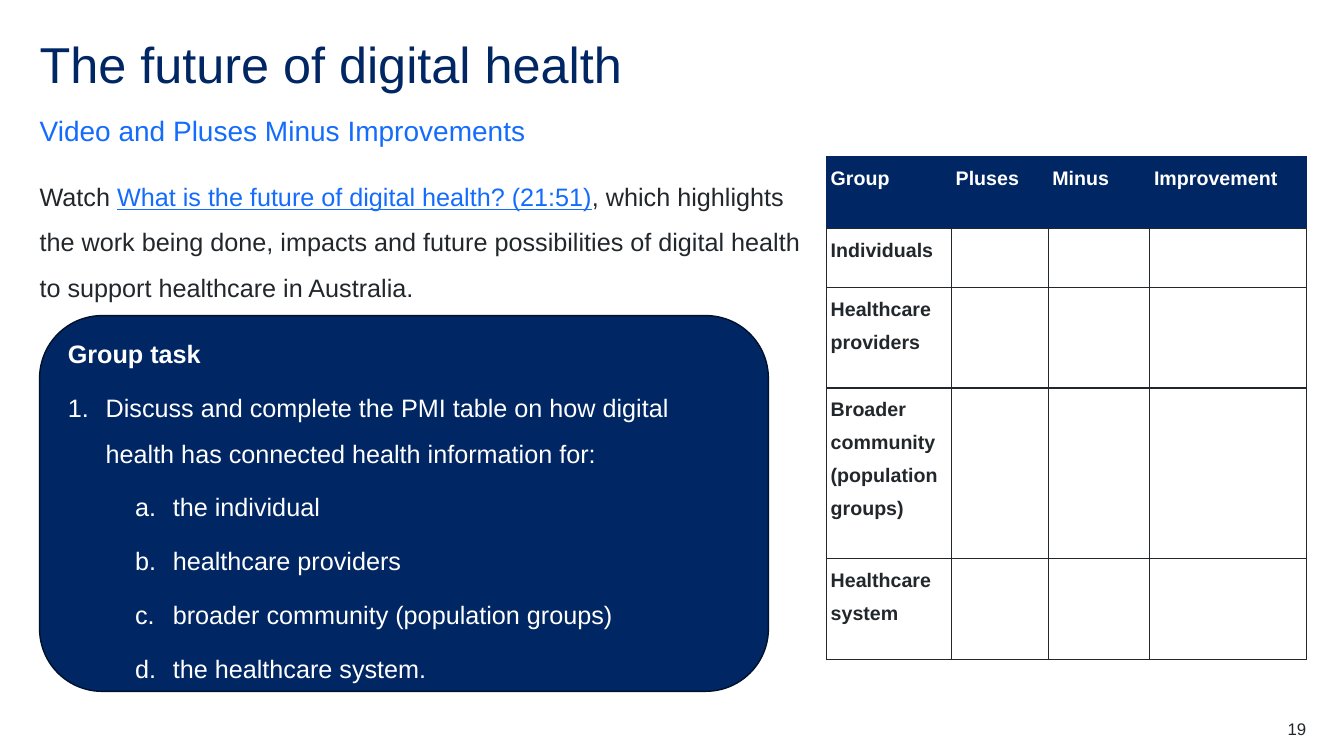
"""Build the slide on the future of digital health: video, group task and PMI table."""
from lxml import etree
from pptx import Presentation
from pptx.dml.color import RGBColor
from pptx.enum.shapes import MSO_SHAPE
from pptx.enum.text import MSO_ANCHOR, PP_ALIGN
from pptx.oxml.ns import qn
from pptx.util import Pt

NAVY = RGBColor(0x00, 0x26, 0x64)
BLUE = RGBColor(0x14, 0x6C, 0xFD)
INK = RGBColor(0x22, 0x27, 0x2B)
OUTLINE = RGBColor(0x00, 0x11, 0x2C)
WHITE = RGBColor(0xFF, 0xFF, 0xFF)
ROUNDED = MSO_SHAPE.ROUNDED_RECTANGLE
TOP, MIDDLE, BOTTOM = MSO_ANCHOR.TOP, MSO_ANCHOR.MIDDLE, MSO_ANCHOR.BOTTOM
LEFT, RIGHT = PP_ALIGN.LEFT, PP_ALIGN.RIGHT
BODY = {"line_spacing": 1.5, "space_after": Pt(6)}
CELL = {**BODY, "space_before": Pt(12)}


def write(p, text, size, color, para, **font):
    """Add a run to a paragraph and format both."""
    for name, value in {"alignment": LEFT, **para}.items():
        setattr(p, name, value)
    r = p.add_run()
    r.text = text
    r.font.color.rgb = color
    for name, value in {"name": "Arial", "size": Pt(size), **font}.items():
        setattr(r.font, name, value)


def text_frame(left, top, width, height, anchor=TOP):
    """Add a wrapping text box without margins."""
    tf = s.shapes.add_textbox(Pt(left), Pt(top), Pt(width), Pt(height)).text_frame
    margins = dict.fromkeys(("margin_left", "margin_top", "margin_right", "margin_bottom"), 0)
    for name, value in {**margins, "word_wrap": True, "vertical_anchor": anchor}.items():
        setattr(tf, name, value)
    return tf


prs = Presentation()
prs.slide_width, prs.slide_height = Pt(960), Pt(540)
s = prs.slides.add_slide(prs.slide_layouts[6])

tf = text_frame(28.3, 28.3, 904, 43)
write(tf.paragraphs[0], "The future of digital health", 36, NAVY, {"line_spacing": 0.9})

tf = text_frame(28.3, 77, 904, 28, BOTTOM)
write(tf.paragraphs[0], "Video and Pluses Minus Improvements", 20, BLUE,
      {"line_spacing": 1.5, "space_after": Pt(12)})

p = text_frame(28.3, 118.8, 553, 100).paragraphs[0]
write(p, "Watch ", 18, INK, BODY)
write(p, "What is the future of digital health? (21:51)", 18, BLUE, BODY, underline=True)
write(p, ", which highlights the work being done, impacts and future possibilities "
      "of digital health to support healthcare in Australia.", 18, INK, BODY)

task = s.shapes.add_shape(ROUNDED, Pt(28.3), Pt(225.4), Pt(520.6), Pt(268.4))
task.shadow.inherit = False
task.fill.solid()
task.fill.fore_color.rgb = NAVY
task.line.color.rgb = OUTLINE
task.line.width = Pt(1)
tf = task.text_frame
tf.word_wrap = True
tf.vertical_anchor = MIDDLE
write(tf.paragraphs[0], "Group task", 18, WHITE, BODY, bold=True)
STEPS = [
    (0, "Discuss and complete the PMI table on how digital health has connected "
        "health information for:"),
    (1, "the individual"),
    (1, "healthcare providers"),
    (1, "broader community (population groups)"),
    (1, "the healthcare system."),
]
NUMBERING = [("arabicPeriod", 27), ("alphaLcPeriod", 75)]
for level, text in STEPS:
    p = tf.add_paragraph()
    write(p, text, 18, WHITE, {**BODY, "level": level})
    scheme, indent = NUMBERING[level]
    pPr = p._p.get_or_add_pPr()
    pPr.set("marL", str(Pt(indent)))
    pPr.set("indent", str(-Pt(27)))
    etree.SubElement(pPr, qn("a:buFont")).set("typeface", "+mj-lt")
    etree.SubElement(pPr, qn("a:buAutoNum")).set("type", scheme)

COLUMNS = [("Group", 89.3), ("Pluses", 69), ("Minus", 72.7), ("Improvement", 111.8)]
ROWS = [("Individuals", 41.8), ("Healthcare providers", 72),
        ("Broader community (population groups)", 121.7), ("Healthcare system", 72)]
widths = [width for _, width in COLUMNS]
heights = [51.6] + [height for _, height in ROWS]
table = s.shapes.add_table(len(heights), len(widths), Pt(590.4), Pt(111.8),
                           Pt(sum(widths)), Pt(sum(heights))).table
table.horz_banding = False
for column, width in zip(table.columns, widths):
    column.width = Pt(width)
for row, height in zip(table.rows, heights):
    row.height = Pt(height)

labels = [[name for name, _ in COLUMNS]] + [[name, "", "", ""] for name, _ in ROWS]
for i, row in enumerate(labels):
    for j, text in enumerate(row):
        cell = table.cell(i, j)
        cell.margin_left = cell.margin_right = Pt(3)
        cell.margin_top = cell.margin_bottom = 0
        if text:
            write(cell.text_frame.paragraphs[0], text, 14, INK if i else WHITE, CELL, bold=True)
        if i:
            cell.fill.background()
        else:
            cell.fill.solid()
            cell.fill.fore_color.rgb = NAVY
        tcPr = cell._tc.get_or_add_tcPr()
        for k, side in enumerate(("lnL", "lnR", "lnT", "lnB")):
            header_edge = i == 0 and side != "lnB"
            ln = etree.Element(qn(f"a:{side}"), w=str(Pt(0.5 if header_edge else 1)))
            solid = etree.SubElement(ln, qn("a:solidFill"))
            etree.SubElement(solid, qn("a:srgbClr")).set("val", str(NAVY if header_edge else INK))
            tcPr.insert(k, ln)

tf = text_frame(876, 513.4, 57, 14.4)
write(tf.paragraphs[0], "19", 12, INK, {"alignment": RIGHT})

prs.save("out.pptx")
